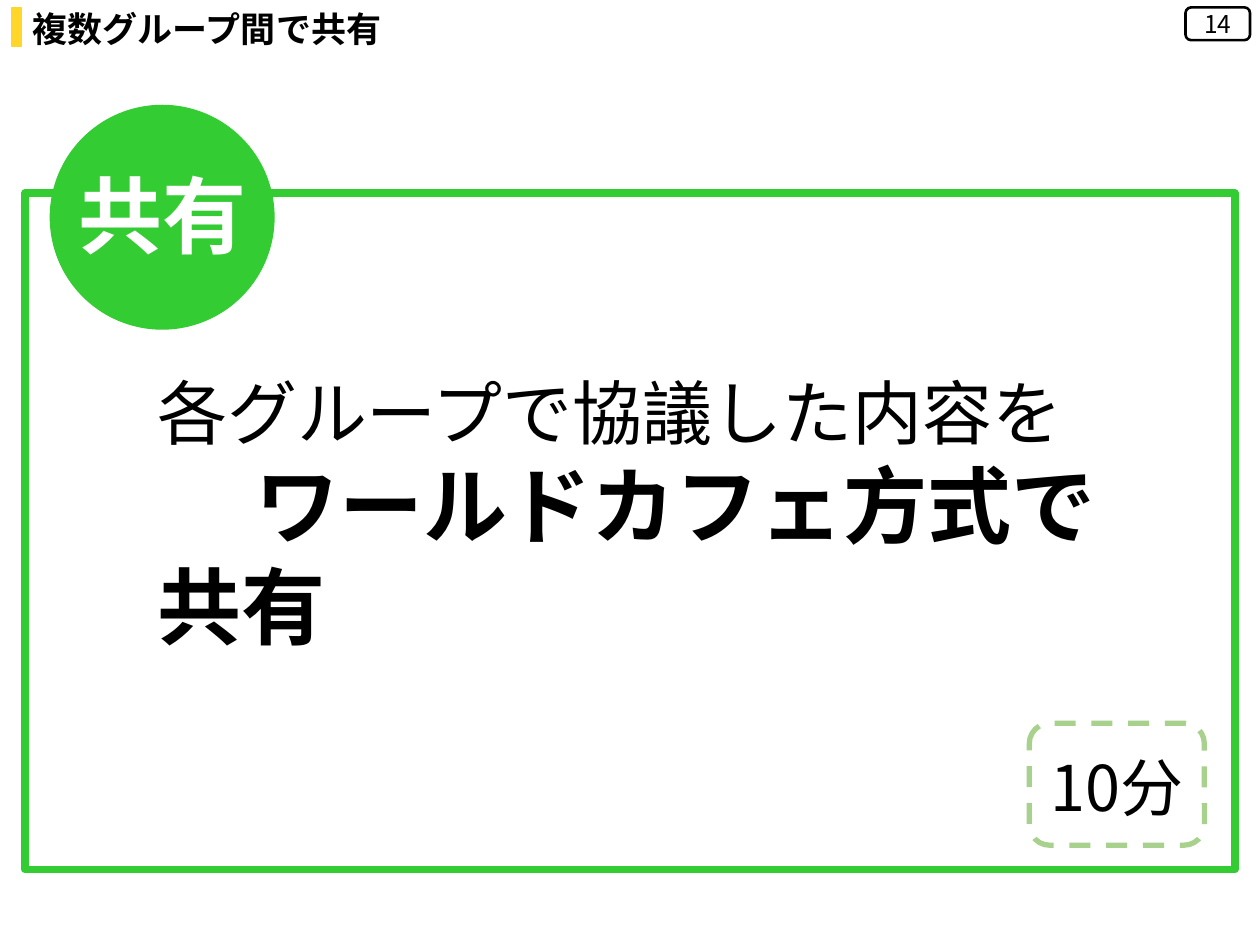
"""Build the slide that announces the sharing step between groups."""
from dataclasses import dataclass, field
from typing import Optional

from lxml.etree import SubElement
from pptx import Presentation
from pptx.dml.color import RGBColor
from pptx.enum.dml import MSO_LINE_DASH_STYLE as Dash
from pptx.enum.shapes import MSO_AUTO_SHAPE_TYPE as Kind
from pptx.enum.text import MSO_VERTICAL_ANCHOR as Anchor, PP_PARAGRAPH_ALIGNMENT as Align
from pptx.oxml.ns import qn
from pptx.util import Cm, Pt


@dataclass(frozen=True)
class Theme:
    font: str = "Noto Sans CJK JP"
    black: str = "000000"
    white: str = "FFFFFF"
    green: str = "33CC33"
    pale_green: str = "A9D18E"
    yellow: str = "FFD629"
    badge_size: int = 14
    title_size: int = 20
    time_size: int = 36
    body_size: int = 40
    strong_size: int = 48


THEME = Theme()


@dataclass(frozen=True)
class Line:
    text: str
    size: int
    bold: bool = False
    color: str = THEME.black
    align: Align = Align.LEFT
    indent: float = 0


@dataclass(frozen=True)
class Box:
    place: tuple[float, float, float, float]
    kind: Optional[Kind] = None
    fill: Optional[str] = None
    outline: str = THEME.black
    weight: float = 1
    dash: Optional[Dash] = None
    anchor: Anchor = Anchor.TOP
    lines: list[Line] = field(default_factory=list)


BOXES = [
    Box((0.51, 3.89, 24.38, 13.64), Kind.RECTANGLE, outline=THEME.green, weight=4.5),
    Box((20.75, 14.58, 3.53, 2.46), Kind.ROUNDED_RECTANGLE,
        outline=THEME.pale_green, weight=3, dash=Dash.DASH),
    Box((20.93, 14.96, 3.61, 1.8), lines=[Line("10分", THEME.time_size)]),
    Box((2.92, 7.32, 19.89, 4.01), lines=[
        Line("各グループで協議した内容を", THEME.body_size),
        Line("ワールドカフェ方式で共有", THEME.strong_size, bold=True, indent=1.98)]),
    Box((1.02, 2.13, 4.5, 4.5), Kind.OVAL, THEME.green, THEME.green),
    Box((0.81, 3.18, 4.95, 2.31), lines=[
        Line("共有", THEME.strong_size, True, THEME.white, Align.CENTER)]),
    Box((0.41, 0.03, 8.08, 1.12), lines=[
        Line("複数グループ間で共有", THEME.title_size, bold=True)]),
    Box((23.9, 0.15, 1.3, 0.66), Kind.ROUNDED_RECTANGLE, THEME.white, weight=1.5,
        anchor=Anchor.MIDDLE, lines=[Line("14", THEME.badge_size, align=Align.CENTER)]),
    Box((0.25, 0.15, 0.18, 0.79), Kind.RECTANGLE, THEME.yellow, THEME.yellow),
]


def apply_format(target: object, values: dict) -> None:
    """Set each named attribute on the target."""
    for name, value in values.items():
        setattr(target, name, value)


def write_line(paragraph: object, line: Line) -> None:
    """Write one formatted paragraph."""
    paragraph.alignment = line.align
    if line.indent:
        paragraph._p.get_or_add_pPr().set("indent", str(Cm(line.indent)))
    run = paragraph.add_run()
    run.text = line.text
    apply_format(run.font, {"name": THEME.font, "size": Pt(line.size), "bold": line.bold})
    run.font.color.rgb = RGBColor.from_string(line.color)
    SubElement(run.font._element, qn("a:ea"), typeface=THEME.font)


def style_shape(shape: object, box: Box) -> None:
    """Give a preset shape its fill and outline."""
    shape.shadow.inherit = False
    if box.fill:
        shape.fill.solid()
        shape.fill.fore_color.rgb = RGBColor.from_string(box.fill)
    else:
        shape.fill.background()
    shape.line.color.rgb = RGBColor.from_string(box.outline)
    apply_format(shape.line, {"width": Pt(box.weight), "dash_style": box.dash})


def draw_box(slide: object, box: Box) -> None:
    """Draw a preset shape or a text box with its lines."""
    place = [Cm(length) for length in box.place]
    if box.kind is None:
        shape = slide.shapes.add_textbox(*place)
    else:
        shape = slide.shapes.add_shape(box.kind, *place)
        style_shape(shape, box)
    frame = shape.text_frame
    apply_format(frame, {"word_wrap": True, "vertical_anchor": box.anchor})
    for index, line in enumerate(box.lines):
        write_line(frame.add_paragraph() if index else frame.paragraphs[0], line)


def main() -> None:
    """Create and save the presentation."""
    presentation = Presentation()
    apply_format(presentation, {"slide_width": Cm(25.4), "slide_height": Cm(19.05)})
    slide = presentation.slides.add_slide(presentation.slide_layouts[6])
    for box in BOXES:
        draw_box(slide, box)
    presentation.save("out.pptx")


if __name__ == "__main__":
    main()
